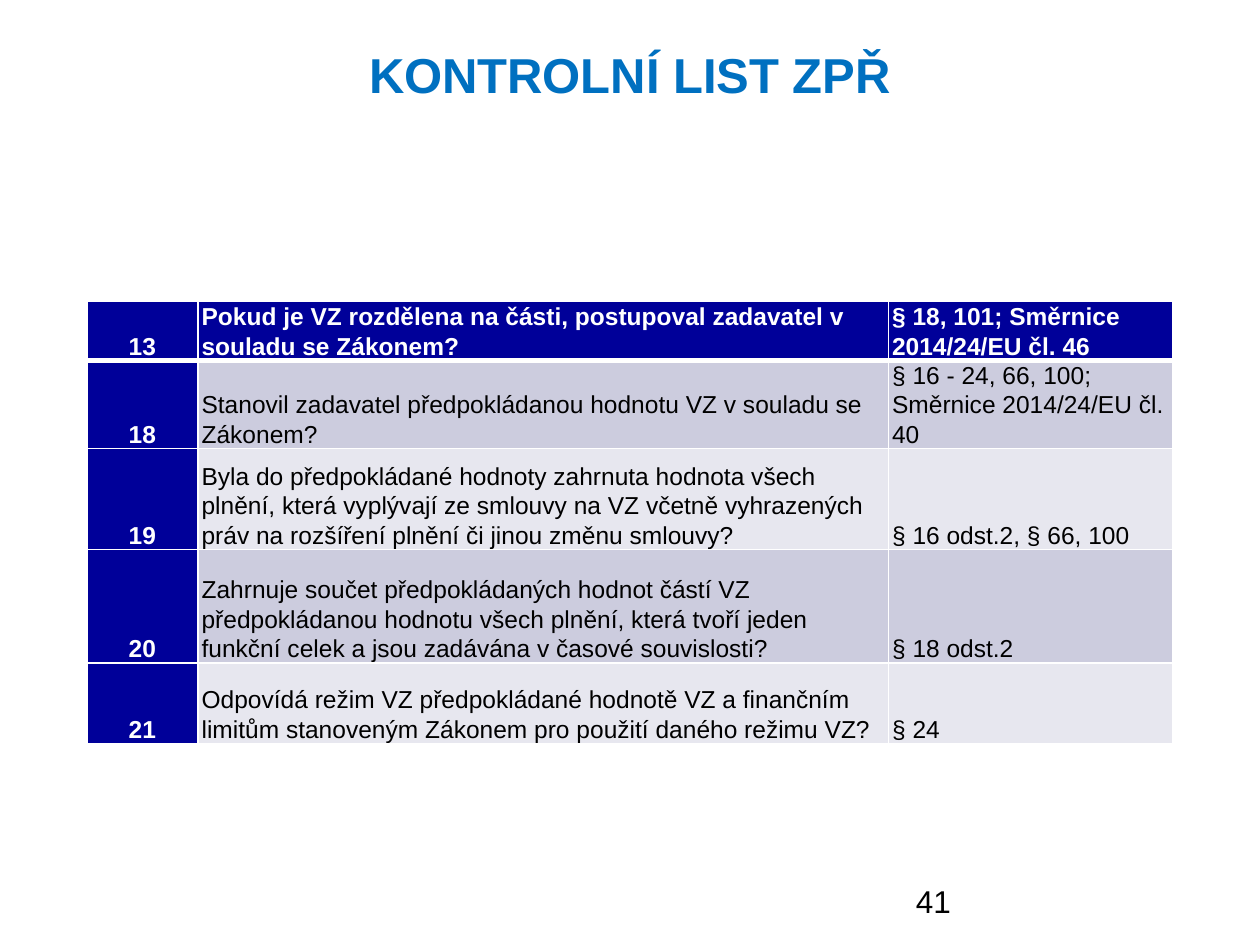
from lxml.etree import SubElement
from pptx import Presentation
from pptx.dml.color import RGBColor
from pptx.enum.text import MSO_ANCHOR as Anchor, PP_ALIGN as Align
from pptx.oxml.ns import qn
from pptx.util import Inches, Pt

FONT = "Arial"
WHITE = RGBColor(0xFF, 0xFF, 0xFF)
BLACK = RGBColor(0, 0, 0)
TITLE_BLUE = RGBColor(0x00, 0x70, 0xC0)
NAVY = RGBColor(0x00, 0x00, 0x99)
BANDS = (RGBColor(0xE7, 0xE7, 0xEF), RGBColor(0xCC, 0xCC, 0xDE))

COLUMN_WIDTHS = (0.88, 5.48, 2.26)
ROW_HEIGHTS = (0.47, 0.47, 0.8, 0.9, 0.64)
CHECKLIST = (
    ("13", "Pokud je VZ rozdělena na části, postupoval zadavatel v souladu se Zákonem?",
     "§ 18, 101; Směrnice 2014/24/EU čl. 46"),
    ("18", "Stanovil zadavatel předpokládanou hodnotu VZ v souladu se Zákonem?",
     "§ 16 - 24, 66, 100; Směrnice 2014/24/EU čl. 40"),
    ("19", "Byla do předpokládané hodnoty zahrnuta hodnota všech plnění, která vyplývají "
           "ze smlouvy na VZ včetně vyhrazených práv na rozšíření plnění či jinou změnu smlouvy?",
     "§ 16 odst.2, § 66, 100"),
    ("20", "Zahrnuje součet předpokládaných hodnot částí VZ předpokládanou hodnotu všech "
           "plnění, která tvoří jeden funkční celek a jsou zadávána v časové souvislosti?",
     "§ 18 odst.2"),
    ("21", "Odpovídá režim VZ předpokládané hodnotě VZ a finančním limitům stanoveným "
           "Zákonem pro použití daného režimu VZ?",
     "§ 24"),
)


def add_run(paragraph, text, size, color, bold=False):
    """Append a formatted run to a paragraph."""
    run = paragraph.add_run()
    run.text = text
    run.font.name = FONT
    run.font.size = Pt(size)
    run.font.bold = bold
    run.font.color.rgb = color


def set_title(slide, text):
    """Place and fill the title placeholder."""
    title = slide.shapes.title
    title.left, title.top = Inches(0.5), Inches(0.3)
    title.width, title.height = Inches(9), Inches(1.25)
    title.text_frame.vertical_anchor = Anchor.TOP
    paragraph = title.text_frame.paragraphs[0]
    paragraph.alignment = Align.CENTER
    add_run(paragraph, text, 28, TITLE_BLUE, True)


def set_borders(cell, bottom_width):
    """Draw white cell borders, with a chosen bottom width."""
    properties = cell._tc.get_or_add_tcPr()
    for side, width in (("L", 1), ("R", 1), ("T", 1), ("B", bottom_width)):
        line = SubElement(properties, qn(f"a:ln{side}"), w=str(Pt(width)))
        fill = SubElement(line, qn("a:solidFill"))
        SubElement(fill, qn("a:srgbClr"), val=str(WHITE))


def fill_cell(cell, text, row, column):
    """Format a checklist cell according to its row and column."""
    heading = row == 0 or column == 0
    set_borders(cell, 3 if row == 0 else 1)
    cell.fill.solid()
    cell.fill.fore_color.rgb = NAVY if heading else BANDS[row % 2]
    cell.vertical_anchor = Anchor.BOTTOM
    cell.margin_left = cell.margin_right = Inches(0.03)
    cell.margin_top = cell.margin_bottom = 0
    paragraph = cell.text_frame.paragraphs[0]
    paragraph.alignment = Align.CENTER if column == 0 else Align.LEFT
    paragraph.line_spacing = 1.07
    add_run(paragraph, text, 14, WHITE if heading else BLACK, heading)


def add_checklist(slide):
    """Add the checklist table."""
    table = slide.shapes.add_table(
        len(CHECKLIST), len(COLUMN_WIDTHS), Inches(0.69), Inches(2.39),
        Inches(sum(COLUMN_WIDTHS)), Inches(sum(ROW_HEIGHTS))).table
    for column, width in zip(table.columns, COLUMN_WIDTHS):
        column.width = Inches(width)
    for row, height in zip(table.rows, ROW_HEIGHTS):
        row.height = Inches(height)
    for row, texts in enumerate(CHECKLIST):
        for column, text in enumerate(texts):
            fill_cell(table.cell(row, column), text, row, column)


def add_page_number(slide, number):
    """Add the page number at the bottom."""
    box = slide.shapes.add_textbox(Inches(7.17), Inches(6.95), Inches(2.33), Inches(0.4))
    box.text_frame.word_wrap = True
    add_run(box.text_frame.paragraphs[0], number, 18, BLACK)


def main():
    """Build and save the presentation."""
    presentation = Presentation()
    presentation.slide_width, presentation.slide_height = Inches(10), Inches(7.5)
    slide = presentation.slides.add_slide(presentation.slide_layouts[5])
    set_title(slide, "KONTROLNÍ LIST ZPŘ")
    add_checklist(slide)
    add_page_number(slide, "41")
    presentation.save("out.pptx")


if __name__ == "__main__":
    main()
